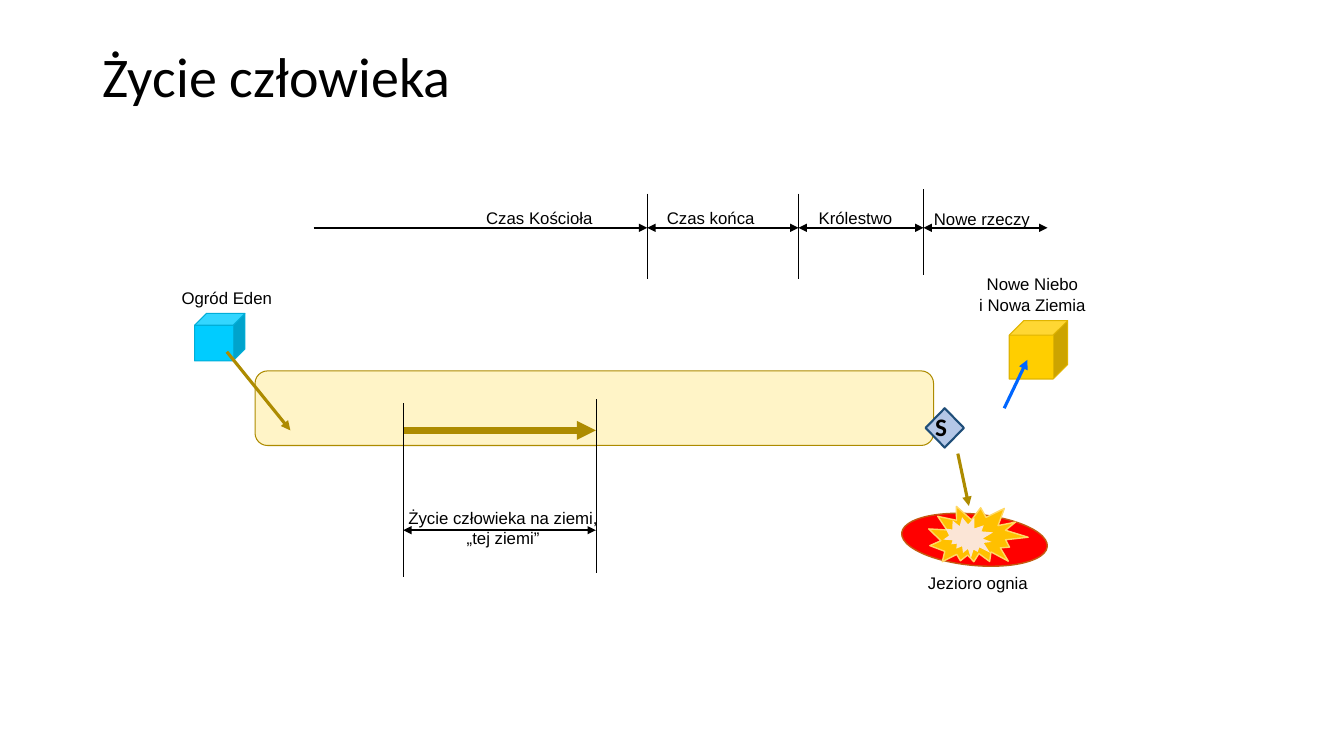
from lxml.etree import SubElement
from pptx import Presentation
from pptx.dml.color import RGBColor
from pptx.enum.shapes import MSO_CONNECTOR, MSO_SHAPE as SHAPE
from pptx.enum.text import MSO_ANCHOR as ANCHOR, PP_ALIGN as ALIGN
from pptx.oxml.ns import qn
from pptx.util import Inches, Pt

COLORS = {
    "black": "000000", "cream": "FFF4C7", "olive": "AD8B00",
    "blue": "0066FF", "sky": "00CCFF", "sky edge": "00AED8",
    "gold": "FFCE00", "gold edge": "E0B400", "pale blue": "B4C7E7",
    "navy": "1F4E79", "red": "FF0000", "rust": "C55A11",
    "flame": "FFC000", "flame edge": "FFD966", "glow": "FBE5D6",
}
AXIS_Y = 2.26
ERA_BOUNDS = [6.42, 7.92, 9.16, 10.39]
BIRTH_X, DEATH_X = 4, 5.91


def color(name):
    """Return the named palette colour."""
    return RGBColor.from_string(COLORS[name])


def style_text(frame, text, font, size, align, bold=False):
    """Fill a text frame and format its single paragraph."""
    frame.text = text
    para = frame.paragraphs[0]
    para.alignment = align
    for span in para.runs:
        span.font.name = font
        span.font.size = Pt(size)
        span.font.bold = bold
        span.font.color.rgb = color("black")


def add_label(page, text, left, top, width, height=0.26):
    """Add a small centred caption."""
    box = page.shapes.add_textbox(Inches(left), Inches(top), Inches(width), Inches(height))
    frame = box.text_frame
    frame.word_wrap = True
    frame.vertical_anchor = ANCHOR.MIDDLE
    frame.margin_left = frame.margin_right = Inches(0.03)
    frame.margin_top = frame.margin_bottom = Inches(0.03)
    style_text(frame, text, "Arial", 12, ALIGN.CENTER)


def add_figure(shapes, kind, area, fill, edge=None, weight=0.75, turn=0):
    """Add a filled preset shape, outlined when an edge colour is given."""
    figure = shapes.add_shape(kind, *[Inches(value) for value in area])
    figure.shadow.inherit = False
    figure.rotation = turn
    figure.fill.solid()
    figure.fill.fore_color.rgb = color(fill)
    if edge:
        figure.line.color.rgb = color(edge)
        figure.line.width = Pt(weight)
    else:
        figure.line.fill.background()
    return figure


def add_line(page, start, end, weight=0.5, tint="black", ends=()):
    """Add a straight line with triangles at the listed ends."""
    points = [Inches(value) for value in (*start, *end)]
    line = page.shapes.add_connector(MSO_CONNECTOR.STRAIGHT, *points)
    line.line.color.rgb = color(tint)
    line.line.width = Pt(weight)
    properties = line.element.spPr
    for end_name in ends:
        SubElement(properties.find(qn("a:ln")), qn(f"a:{end_name}"), type="triangle")
    SubElement(properties, qn("a:effectLst"))


def add_title(page):
    """Place and format the title placeholder."""
    title = page.shapes.title
    title.left, title.top = Inches(0.92), Inches(0.4)
    title.width, title.height = Inches(11.5), Inches(0.78)
    title.text_frame.vertical_anchor = ANCHOR.MIDDLE
    style_text(title.text_frame, "Życie człowieka", "Calibri", 40, ALIGN.LEFT)
    title.text_frame.paragraphs[0].line_spacing = 0.9


def add_eras(page):
    """Draw the time axis with its eras."""
    both = ("headEnd", "tailEnd")
    add_line(page, (3.11, AXIS_Y), (ERA_BOUNDS[0], AXIS_Y), 1.5, ends=("tailEnd",))
    for start, end in zip(ERA_BOUNDS, ERA_BOUNDS[1:]):
        add_line(page, (start, AXIS_Y), (end, AXIS_Y), 1.5, ends=both)
    for x, top in zip(ERA_BOUNDS, (1.92, 1.92, 1.88)):
        add_line(page, (x, top), (x, top + 0.85))
    add_label(page, "Czas Kościoła", 4.63, 2.03, 1.44)
    add_label(page, "Czas końca", 6.48, 2.03, 1.14)
    add_label(page, "Królestwo", 8.02, 2.03, 0.93)
    add_label(page, "Nowe rzeczy", 9.16, 2.04, 1.16)


def add_lifetime(page):
    """Draw the span of life on earth."""
    add_line(page, (BIRTH_X, 4.27), (DEATH_X, 4.27), 4.5, "olive", ("tailEnd",))
    for x, top in ((BIRTH_X, 4), (DEATH_X, 3.96)):
        add_line(page, (x, top), (x, top + 1.72))
    add_line(page, (BIRTH_X, 5.26), (DEATH_X, 5.26), 1.5, ends=("headEnd", "tailEnd"))
    add_label(page, "Życie człowieka na ziemi, „tej ziemi”", 3.99, 5.01, 2, 0.46)


def add_judgement(page):
    """Draw the diamond marked with S."""
    diamond = add_figure(page.shapes, SHAPE.DIAMOND, (9.18, 4.05, 0.38, 0.39),
                         "pale blue", "navy", 1.5)
    frame = diamond.text_frame
    frame.margin_left = frame.margin_right = 0
    frame.margin_top = frame.margin_bottom = Inches(0.04)
    frame.vertical_anchor = ANCHOR.MIDDLE
    style_text(frame, "S", "Calibri", 18, ALIGN.LEFT, True)
    frame.paragraphs[0].line_spacing = 0.9


def add_fire_lake(page):
    """Draw the burning lake as one group."""
    lake = page.shapes.add_group_shape().shapes
    add_figure(lake, SHAPE.FLOWCHART_CONNECTOR, (8.94, 5.1, 1.45, 0.51), "red", "rust", 1, 5.4)
    add_figure(lake, SHAPE.EXPLOSION2, (9.21, 4.98, 0.97, 0.68), "flame", "flame edge", 1, 16.2)
    add_figure(lake, SHAPE.EXPLOSION2, (9.38, 5.11, 0.47, 0.45), "glow", turn=56.2)
    add_label(page, "Jezioro ognia", 8.98, 5.65, 1.44)


def main():
    """Build and save the slide."""
    deck = Presentation()
    deck.slide_width, deck.slide_height = Inches(13.33), Inches(7.5)
    page = deck.slides.add_slide(deck.slide_layouts[5])
    add_title(page)
    add_figure(page.shapes, SHAPE.ROUNDED_RECTANGLE, (2.53, 3.68, 6.73, 0.74), "cream", "olive")
    add_eras(page)
    add_lifetime(page)
    add_judgement(page)
    add_fire_lake(page)
    add_figure(page.shapes, SHAPE.CUBE, (1.93, 3.11, 0.5, 0.47), "sky", "sky edge")
    add_figure(page.shapes, SHAPE.CUBE, (10.01, 3.18, 0.58, 0.58), "gold", "gold edge")
    add_label(page, "Ogród Eden", 1.53, 2.82, 1.44)
    add_label(page, "Nowe Niebo\vi Nowa Ziemia", 9.52, 2.69, 1.44, 0.46)
    for start, end, tint in (
        ((2.25, 3.49), (2.88, 4.27), "olive"),
        ((9.5, 4.5), (9.61, 5.02), "olive"),
        ((9.96, 4.05), (10.19, 3.57), "blue"),
    ):
        add_line(page, start, end, 2.25, tint, ("tailEnd",))
    deck.save("out.pptx")


if __name__ == "__main__":
    main()
